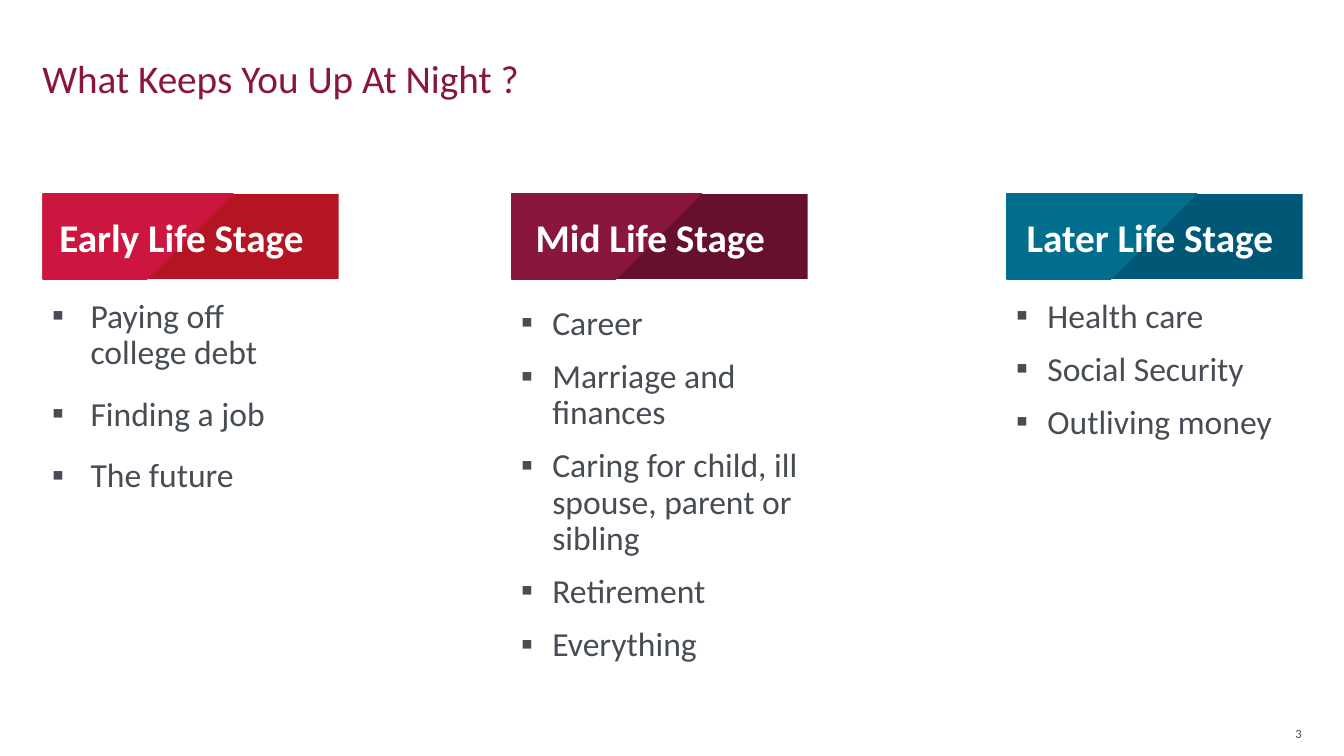
from lxml import etree
from pptx import Presentation
from pptx.dml.color import RGBColor
from pptx.enum import shapes, text
from pptx.oxml import ns
from pptx.util import Inches, Pt

COLORS = {
    "title": "89163E", "body": "474C55", "white": "FFFFFF",
    "red": "CD163F", "dark red": "B51523",
    "plum": "89163E", "dark plum": "67102E",
    "teal": "006E8C", "dark teal": "005776",
}
FONT = "Calibri"
HEADER_TOP, HEADER_WIDTH, HEADER_HEIGHT = 1.92, 2.94, 0.85

# Each stage: heading, colour, left, heading right inset,
# list top, list width, list height, indent, space before, items
STAGES = [
    ("Early Life Stage", "red", 0.42, 0.28, 2.92, 2.86, 2.06, 0.38, 6,
     ["Paying off college debt", "Finding a job", "The future"]),
    ("Mid Life Stage", "plum", 5.07, 0.28, 2.99, 2.94, 3.68, 0.31, 0,
     ["Career", "Marriage and finances",
      "Caring for child, ill spouse, parent or sibling",
      "Retirement", "Everything"]),
    ("Later Life Stage", "teal", 9.98, 0.19, 2.92, 2.81, 1.53, 0.31, 0,
     ["Health care", "Social Security", "Outliving money"]),
]


def style(paragraph, size, color, bold=False):
    font = paragraph.font
    font.name, font.size, font.bold = FONT, Pt(size), bold
    font.color.rgb = RGBColor.from_string(COLORS[color])


def add_box(slide, left, top, width, height, anchor, side=0.1, edge=0.05):
    box = slide.shapes.add_textbox(
        Inches(left), Inches(top), Inches(width), Inches(height))
    frame = box.text_frame
    frame.word_wrap = True
    frame.vertical_anchor = anchor
    frame.margin_left = frame.margin_right = Inches(side)
    frame.margin_top = frame.margin_bottom = Inches(edge)
    return frame


def fill_two_tone(shape, color):
    """Diagonal gradient with a hard edge in the middle."""
    shape.fill.gradient()
    shape.fill.gradient_angle = 135
    stops = shape.element.spPr.find(ns.qn("a:gradFill")).find(ns.qn("a:gsLst"))
    for stop in list(stops):
        stops.remove(stop)
    dark = "dark " + color
    for percent, name in [(0, dark), (50, dark), (50, color), (100, color)]:
        stop = etree.SubElement(stops, ns.qn("a:gs"), pos=str(percent * 1000))
        etree.SubElement(stop, ns.qn("a:srgbClr"), val=COLORS[name])


def add_header(slide, heading, color, left, right_inset):
    shape = slide.shapes.add_shape(
        shapes.MSO_SHAPE.RECTANGLE, Inches(left), Inches(HEADER_TOP),
        Inches(HEADER_WIDTH), Inches(HEADER_HEIGHT))
    shape.shadow.inherit = False
    shape.line.fill.background()
    fill_two_tone(shape, color)
    frame = shape.text_frame
    frame.margin_right = Inches(right_inset)
    frame.vertical_anchor = text.MSO_ANCHOR.MIDDLE
    paragraph = frame.paragraphs[0]
    paragraph.text = heading
    paragraph.alignment = text.PP_ALIGN.CENTER
    style(paragraph, 28, "white", bold=True)


def add_bullet(paragraph, indent):
    properties = paragraph._p.get_or_add_pPr()
    properties.set("marL", str(Inches(indent)))
    properties.set("indent", str(-Inches(indent)))
    etree.SubElement(properties, ns.qn("a:buFont"), typeface=FONT)
    etree.SubElement(properties, ns.qn("a:buChar"), char="▪")


def add_list(slide, left, top, width, height, indent, space_before, items):
    frame = add_box(slide, left, top, width, height, text.MSO_ANCHOR.TOP)
    for index, item in enumerate(items):
        paragraph = frame.add_paragraph() if index else frame.paragraphs[0]
        paragraph.text = item
        add_bullet(paragraph, indent)
        paragraph.line_spacing = 0.9
        paragraph.space_before = Pt(space_before if index else 0)
        paragraph.space_after = Pt(12)
        style(paragraph, 24, "body")


def main():
    presentation = Presentation()
    presentation.slide_width = Inches(13.33)
    presentation.slide_height = Inches(7.5)
    slide = presentation.slides.add_slide(presentation.slide_layouts[6])

    # Title
    frame = add_box(slide, 0.38, 0, 11.05, 1.01, text.MSO_ANCHOR.BOTTOM,
                    side=0.04, edge=0)
    title = frame.paragraphs[0]
    title.text = "What Keeps You Up At Night ?"
    title.line_spacing = 0.9
    style(title, 28, "title")

    # Life stages
    for (heading, color, left, right_inset, top, width, height,
         indent, space_before, items) in STAGES:
        add_header(slide, heading, color, left, right_inset)
        add_list(slide, left, top, width, height, indent, space_before, items)

    # Slide number
    frame = add_box(slide, 12.5, 7.21, 0.41, 0.14, text.MSO_ANCHOR.MIDDLE,
                    side=0, edge=0)
    number = frame.paragraphs[0]
    number.text = "3"
    number.alignment = text.PP_ALIGN.RIGHT
    style(number, 9, "body")

    presentation.save("out.pptx")


if __name__ == "__main__":
    main()
